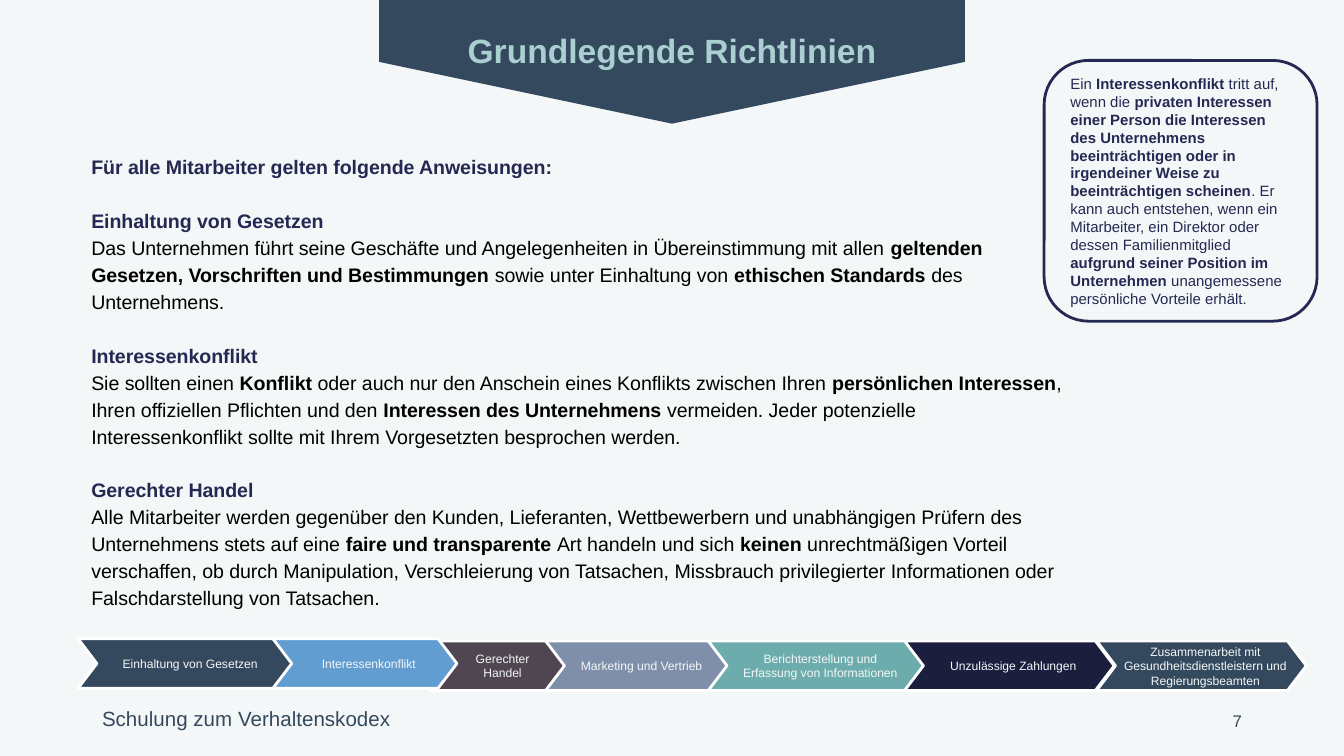
import pptx
import pptx.util
import pptx.dml.color
import pptx.enum.shapes
import pptx.enum.text

Pt = pptx.util.Pt
RGB = pptx.dml.color.RGBColor.from_string
SHAPE = pptx.enum.shapes.MSO_SHAPE
ALIGN = pptx.enum.text.PP_ALIGN
ANCHOR = pptx.enum.text.MSO_ANCHOR

THEME = {
    "font": "Arial",
    "background": "F4F7F7", "slate": "34495E", "mint": "AACFD0",
    "navy": "242852", "black": "000000", "white": "FFFFFF",
    "blue": "629DD1", "plum": "4F4651", "steel": "7F8FA9",
    "teal": "6DACAC", "midnight": "1B1E3D",
    "title": 18, "footer": 11, "number": 9, "body": 10.5, "note": 8, "step": 6.5,
}

TITLE = "Grundlegende Richtlinien"
FOOTER = "Schulung zum Verhaltenskodex"
PAGE_NUMBER = "7"

# Text between ** marks is bold.
INTRO = "**Für alle Mitarbeiter gelten folgende Anweisungen:**"
GUIDELINES = [
    ("**Einhaltung von Gesetzen**",
     "Das Unternehmen führt seine Geschäfte und Angelegenheiten in Übereinstimmung mit allen "
     "**geltenden Gesetzen, Vorschriften und Bestimmungen** sowie unter Einhaltung von "
     "**ethischen Standards** des Unternehmens."),
    ("**Interessenkonflikt**",
     "Sie sollten einen **Konflikt** oder auch nur den Anschein eines Konflikts zwischen Ihren "
     "**persönlichen Interessen**, Ihren offiziellen Pflichten und den "
     "**Interessen des Unternehmens** vermeiden. Jeder potenzielle Interessenkonflikt sollte "
     "mit Ihrem Vorgesetzten besprochen werden."),
    ("**Gerechter Handel**",
     "Alle Mitarbeiter werden gegenüber den Kunden, Lieferanten, Wettbewerbern und unabhängigen "
     "Prüfern des Unternehmens stets auf eine **faire und transparente **Art handeln und sich "
     "**keinen **unrechtmäßigen Vorteil verschaffen, ob durch Manipulation, Verschleierung von "
     "Tatsachen, Missbrauch privilegierter Informationen oder Falschdarstellung von Tatsachen."),
]
CONFLICT_NOTE = (
    "Ein** Interessenkonflikt** tritt auf, wenn die **privaten Interessen einer Person die "
    "Interessen des Unternehmens beeinträchtigen oder in irgendeiner Weise zu beeinträchtigen "
    "scheinen**. Er kann auch entstehen, wenn ein Mitarbeiter, ein Direktor oder dessen "
    "Familienmitglied** aufgrund seiner Position im Unternehmen** unangemessene persönliche "
    "Vorteile erhält.")

# Rows of the topic bar: top, then (label, colour, left, width)
TOPIC_ROWS = [
    (343.4, [
        ("Gerechter Handel", "plum", 230.4, 73.4),
        ("Marketing und Vertrieb", "steel", 292.3, 98.6),
        ("Berichterstellung und Erfassung von Informationen", "teal", 379.4, 115.9),
        ("Unzulässige Zahlungen", "midnight", 484.6, 112.3),
        ("Zusammenarbeit mit Gesundheitsdienstleistern und Regierungsbeamten",
         "slate", 587.5, 112.3),
    ]),
    (342.2, [
        ("Einhaltung von Gesetzen", "slate", 41.8, 115.9),
        ("Interessenkonflikt", "blue", 146.2, 98.6),
    ]),
]
TOPIC_HEIGHT = 26.6
PARAGRAPH_GAP = 14.4


def set_frame(shape, insets, anchor=ANCHOR.TOP):
    frame = shape.text_frame
    left, top, right, bottom = map(Pt, insets)
    settings = {"word_wrap": True, "vertical_anchor": anchor, "margin_left": left,
                "margin_top": top, "margin_right": right, "margin_bottom": bottom}
    for name, value in settings.items():
        setattr(frame, name, value)
    return frame


def write(paragraph, text, size, colour, **layout):
    """Fill a paragraph, turning **marked** stretches bold."""
    for name, value in layout.items():
        setattr(paragraph, name, value)
    for index, stretch in enumerate(text.split("**")):
        if not stretch:
            continue
        run = paragraph.add_run()
        run.text = stretch
        style = {"name": THEME["font"], "size": Pt(THEME[size]), "bold": index % 2 == 1}
        for name, value in style.items():
            setattr(run.font, name, value)
        run.font.color.rgb = RGB(THEME[colour])


def add_shape(shapes, kind, box, adjustment, fill=None, line=None):
    shape = shapes.add_shape(kind, *map(Pt, box))
    shape.shadow.inherit = False
    shape.adjustments[0] = adjustment
    if fill:
        shape.fill.solid()
        shape.fill.fore_color.rgb = RGB(THEME[fill])
    else:
        shape.fill.background()
    if line:
        shape.line.color.rgb = RGB(THEME[line])
        shape.line.width = Pt(1.5)
    else:
        shape.line.fill.background()
    return shape


def add_label(shapes, box, text, size, colour, align, anchor=ANCHOR.TOP):
    frame = set_frame(shapes.add_textbox(*map(Pt, box)), (5, 3, 5, 3), anchor)
    write(frame.paragraphs[0], text, size, colour, alignment=align)


def add_guidelines(shapes):
    frame = set_frame(shapes.add_textbox(*map(Pt, (41.8, 77, 538.6, 253.4))), (7.2,) * 4)
    write(frame.paragraphs[0], INTRO, "body", "navy", line_spacing=0.9)
    for heading, rule in GUIDELINES:
        write(frame.add_paragraph(), heading, "body", "navy",
              line_spacing=1.15, space_before=Pt(PARAGRAPH_GAP))
        write(frame.add_paragraph(), rule, "body", "black", line_spacing=1.15)


def add_topic_bar(shapes):
    bar = shapes.add_group_shape().shapes
    for top, topics in TOPIC_ROWS:
        for label, colour, left, width in topics:
            chevron = add_shape(bar, SHAPE.CHEVRON, (left, top, width, TOPIC_HEIGHT),
                                0.38, colour, "white")
            frame = set_frame(chevron, (4.3, 0, 0, 0), ANCHOR.MIDDLE)
            write(frame.paragraphs[0], label, "step", "background", alignment=ALIGN.CENTER)


def main():
    deck = pptx.Presentation()
    deck.slide_width, deck.slide_height = Pt(720), Pt(405)
    slide = deck.slides.add_slide(deck.slide_layouts[6])
    slide.background.fill.solid()
    slide.background.fill.fore_color.rgb = RGB(THEME["background"])
    shapes = slide.shapes

    add_label(shapes, (49.7, 375.1, 172.8, 18), FOOTER, "footer", "slate", ALIGN.LEFT)
    banner = add_shape(shapes, SHAPE.PENTAGON, (326.9, -123.8, 66.2, 313.9), 0.5, "slate")
    banner.rotation = 90
    add_label(shapes, (160.6, 13, 398.9, 27.4), f"**{TITLE}**", "title", "mint", ALIGN.CENTER)
    add_label(shapes, (508.3, 375.1, 162, 21.6), PAGE_NUMBER, "number", "slate",
              ALIGN.RIGHT, ANCHOR.MIDDLE)
    add_guidelines(shapes)

    note = add_shape(shapes, SHAPE.ROUNDED_RECTANGLE, (559.4, 32.4, 146.2, 139.7),
                     0.17, line="navy")
    frame = set_frame(note, (7.2,) * 4, ANCHOR.MIDDLE)
    write(frame.paragraphs[0], CONFLICT_NOTE, "note", "navy", alignment=ALIGN.LEFT)

    add_topic_bar(shapes)
    deck.save("out.pptx")


if __name__ == "__main__":
    main()
